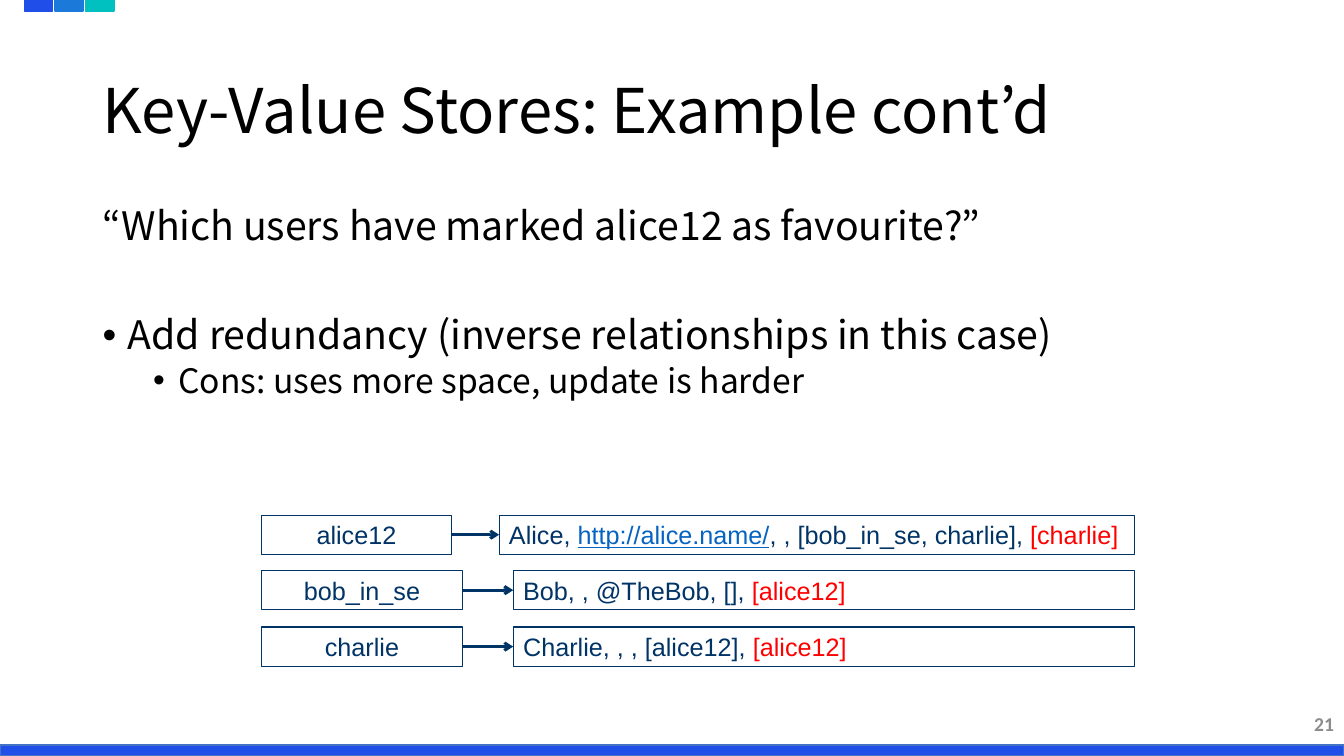
from lxml import etree
from pptx import Presentation, util as u
from pptx.dml.color import RGBColor
from pptx.enum import shapes, text
from pptx.oxml.ns import qn

HEX = {"blue": "1F4EE9", "mid": "1B7AD9", "teal": "00C0C0", "edge": "4472C4",
       "navy": "003366", "red": "FF0000", "link": "0563C1",
       "black": "000000", "grey": "8C8C8C"}
SANS = "Noto Sans CJK KR"
ALIGN, ANCHOR = text.PP_ALIGN, text.MSO_ANCHOR
ROWS = [
    (5.11, 4.48, 4.95, "alice12",
     [("Alice, ", "navy"), ("http://alice.name/", "link"),
      (", , [bob_in_se, charlie], ", "navy"), ("[charlie]", "red")]),
    (5.66, 4.59, 5.09, "bob_in_se",
     [("Bob, , @TheBob, [], ", "navy"), ("[alice12]", "red")]),
    (6.22, 4.59, 5.09, "charlie",
     [("Charlie, , , [alice12], ", "navy"), ("[alice12]", "red")]),
]
LEFT, RIGHT, HIGH = 2.59, 11.25, 0.39


def tint(name):
    return RGBColor.from_string(HEX[name])


def write(para, runs, size=18, font="Arial", color="navy", bold=False,
          align=ALIGN.LEFT, before=0, lines=1.0, indent=None):
    """Fill a paragraph with a string or (words, colour) pairs; indent adds a bullet."""
    if indent is not None:
        props = para._p.get_or_add_pPr()
        props.set("marL", str(u.Inches(indent)))
        props.set("indent", str(u.Inches(-0.25)))
        etree.SubElement(props, qn("a:buFont")).set("typeface", "Arial")
        etree.SubElement(props, qn("a:buChar")).set("char", "•")
    para.alignment = align
    para.space_before = u.Pt(before)
    para.line_spacing = lines
    for words, hue in [(runs, color)] if isinstance(runs, str) else runs:
        run = para.add_run()
        run.text = words
        run.font.size, run.font.name, run.font.bold = u.Pt(size), font, bold
        run.font.color.rgb = tint(hue)
        run.font.underline = hue == "link"


def frame(slide, left, top, width, height, anchor=ANCHOR.MIDDLE):
    box = slide.shapes.add_textbox(*map(u.Inches, (left, top, width, height)))
    box.text_frame.word_wrap = True
    box.text_frame.vertical_anchor = anchor
    return box.text_frame


def block(slide, left, top, width, height, fill, line, weight=1):
    rect = slide.shapes.add_shape(shapes.MSO_SHAPE.RECTANGLE,
                                  *map(u.Inches, (left, top, width, height)))
    rect.shadow.inherit = False
    if fill:
        rect.fill.solid()
        rect.fill.fore_color.rgb = tint(fill)
    else:
        rect.fill.background()
    rect.line.color.rgb = tint(line)
    rect.line.width = u.Pt(weight)
    return rect


def cell(slide, left, right, top, runs, align):
    rect = block(slide, left, top, right - left, HIGH, None, "navy", 0)
    body = rect.text_frame
    body.word_wrap = False
    body.vertical_anchor = ANCHOR.MIDDLE
    write(body.paragraphs[0], runs, align=align)


def arrow(slide, start, end, y):
    line = slide.shapes.add_connector(shapes.MSO_CONNECTOR.STRAIGHT,
                                      *map(u.Inches, (start, y, end, y)))
    line.line.color.rgb = tint("navy")
    line.line.width = u.Pt(0)
    etree.SubElement(line.line._get_or_add_ln(), qn("a:tailEnd")).set("type", "arrow")
    etree.SubElement(line._element.spPr, qn("a:effectLst"))


def main():
    deck = Presentation()
    deck.slide_width, deck.slide_height = u.Inches(13.33), u.Inches(7.5)
    slide = deck.slides.add_slide(deck.slide_layouts[6])

    block(slide, 0, 7.39, 13.33, 0.11, "blue", "edge")
    for i, hue in enumerate(("blue", "mid", "teal")):
        block(slide, 0.24 + 0.305 * i, 0, 0.28, 0.11, hue, hue)

    title = frame(slide, 0.92, 0.4, 11.5, 1.45)
    write(title.paragraphs[0], "Key-Value Stores: Example cont’d",
          size=44, font=SANS, color="black", lines=0.9)

    body = frame(slide, 0.92, 2, 11.5, 2.6, ANCHOR.TOP)
    look = dict(font=SANS, color="black", lines=0.9)
    write(body.paragraphs[0], "“Which users have marked alice12 as favourite?”",
          size=28, **look)
    write(body.add_paragraph(), "Add redundancy (inverse relationships in this case)",
          size=28, before=48, indent=0.25, **look)
    minor = body.add_paragraph()
    minor.level = 1
    write(minor, "Cons: uses more space, update is harder",
          size=24, before=4, indent=0.75, **look)

    page = frame(slide, 10.33, 6.98, 3, 0.4)
    write(page.paragraphs[0], "21", size=14, font="Calibri", color="grey",
          bold=True, align=ALIGN.RIGHT)

    for top, start, end, key, value in ROWS:
        cell(slide, LEFT, start, top, key, ALIGN.CENTER)
        cell(slide, end, RIGHT, top, value, ALIGN.LEFT)
        arrow(slide, start, end, top + HIGH / 2)

    deck.save("out.pptx")


if __name__ == "__main__":
    main()
